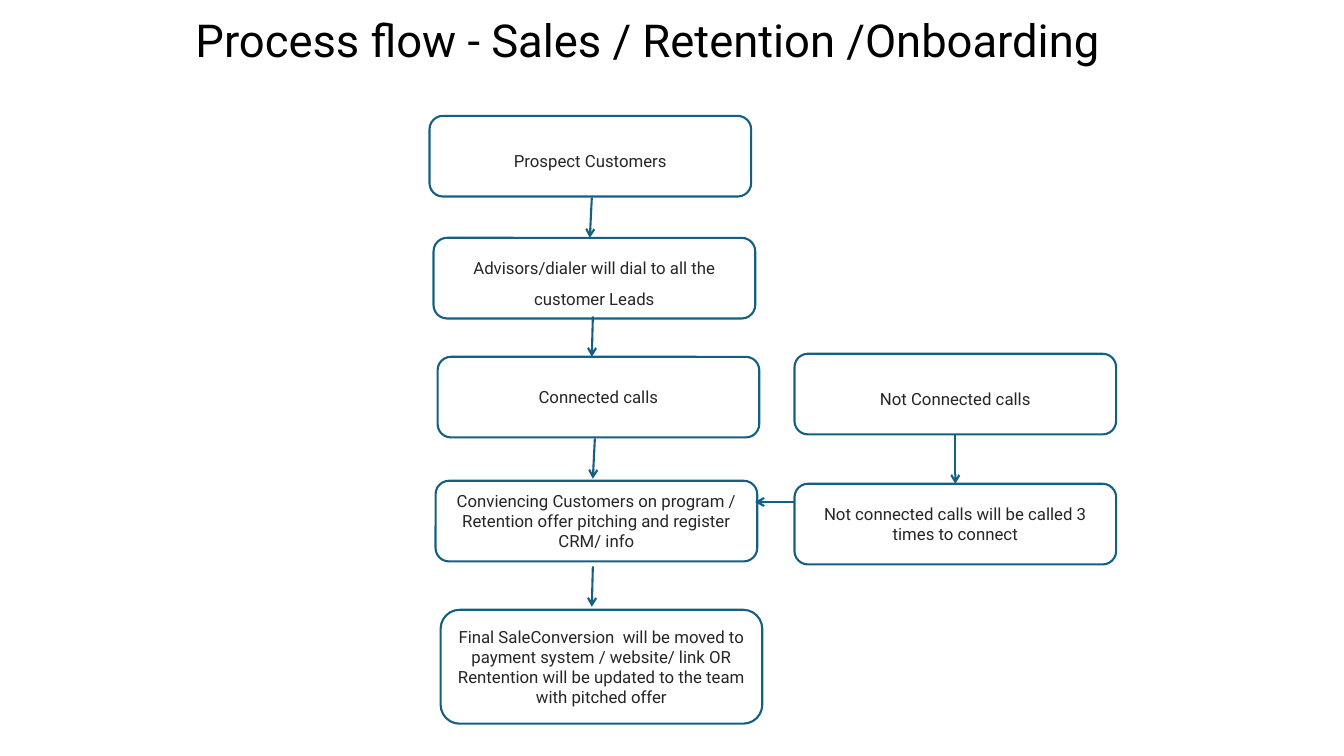
from lxml.etree import SubElement
from pptx import Presentation
from pptx.dml.color import RGBColor
from pptx.enum.shapes import MSO_CONNECTOR, MSO_SHAPE
from pptx.enum.text import MSO_ANCHOR, PP_ALIGN
from pptx.oxml.ns import qn
from pptx.util import Inches, Pt

COLORS = {"background": "FFFFFF", "outline": "156082", "step": "262626", "title": "000000"}
FONT = "Roboto"
STEP_WIDTH, STEP_HEIGHT = 3.19, 0.8


def write(frame, text, size, color, align, spacing, anchor):
    frame.word_wrap = True
    frame.vertical_anchor = anchor
    paragraph = frame.paragraphs[0]
    paragraph.text = text
    paragraph.alignment = align
    paragraph.line_spacing = spacing
    paragraph.font.name = FONT
    paragraph.font.size = Pt(size)
    paragraph.font.color.rgb = RGBColor.from_string(COLORS[color])


def add_arrow(x1, y1, x2, y2):
    arrow = slide.shapes.add_connector(
        MSO_CONNECTOR.STRAIGHT, Inches(x1), Inches(y1), Inches(x2), Inches(y2))
    arrow.line.color.rgb = RGBColor.from_string(COLORS["outline"])
    arrow.line.width = Pt(1.5)
    SubElement(arrow.line._get_or_add_ln(), qn("a:tailEnd"), type="arrow")
    SubElement(arrow._element.spPr, qn("a:effectLst"))
    return arrow


presentation = Presentation()
presentation.slide_width, presentation.slide_height = Inches(13.33), Inches(7.5)
slide = presentation.slides.add_slide(presentation.slide_layouts[6])
slide.background.fill.solid()
slide.background.fill.fore_color.rgb = RGBColor.from_string(COLORS["background"])

title = slide.shapes.add_textbox(Inches(1.84), Inches(0.15), Inches(10), Inches(0.57))
write(title.text_frame, "Process flow - Sales / Retention /Onboarding", 32.4, "title",
      PP_ALIGN.LEFT, 0.9, MSO_ANCHOR.BOTTOM)

# left, top, height, line spacing, text
steps = [
    (4.26, 1.15, STEP_HEIGHT, 1.5, "Prospect Customers"),
    (4.3, 2.36, STEP_HEIGHT, 1.5, "Advisors/dialer will dial to all the customer Leads"),
    (4.34, 3.54, STEP_HEIGHT, 1.0, "Connected calls"),
    (4.32, 4.77, STEP_HEIGHT, 1.0,
     "Conviencing Customers on program / Retention offer pitching and register CRM/ info"),
    (4.37, 6.05, 1.13, 1.0,
     "Final SaleConversion  will be moved to payment system / website/ link OR "
     "Rentention will be updated to the team with pitched offer"),
    (7.88, 3.51, STEP_HEIGHT, 1.5, "Not Connected calls"),
    (7.88, 4.8, STEP_HEIGHT, 1.0, "Not connected calls will be called 3 times to connect"),
]
boxes = []
for left, top, height, spacing, text in steps:
    box = slide.shapes.add_shape(MSO_SHAPE.ROUNDED_RECTANGLE, Inches(left), Inches(top),
                                 Inches(STEP_WIDTH), Inches(height))
    box.shadow.inherit = False
    box.fill.background()
    box.line.color.rgb = RGBColor.from_string(COLORS["outline"])
    box.line.width = Pt(1.5)
    write(box.text_frame, text, 12, "step", PP_ALIGN.CENTER, spacing, MSO_ANCHOR.MIDDLE)
    boxes.append(box)

# Downward arrows of the main column: start x, start y, end x
for x1, y1, x2 in [(5.87, 1.96, 5.85), (5.88, 3.14, 5.87), (5.9, 4.35, 5.88), (5.88, 5.62, 5.87)]:
    add_arrow(x1, y1, x2, y1 + 0.4)

not_connected, called_again = boxes[-2:]
retry_arrow = add_arrow(9.48, 4.31, 9.48, 4.8)
retry_arrow.begin_connect(not_connected, 2)
retry_arrow.end_connect(called_again, 0)
add_arrow(7.88, 4.98, 7.49, 4.98)

presentation.save("out.pptx")
